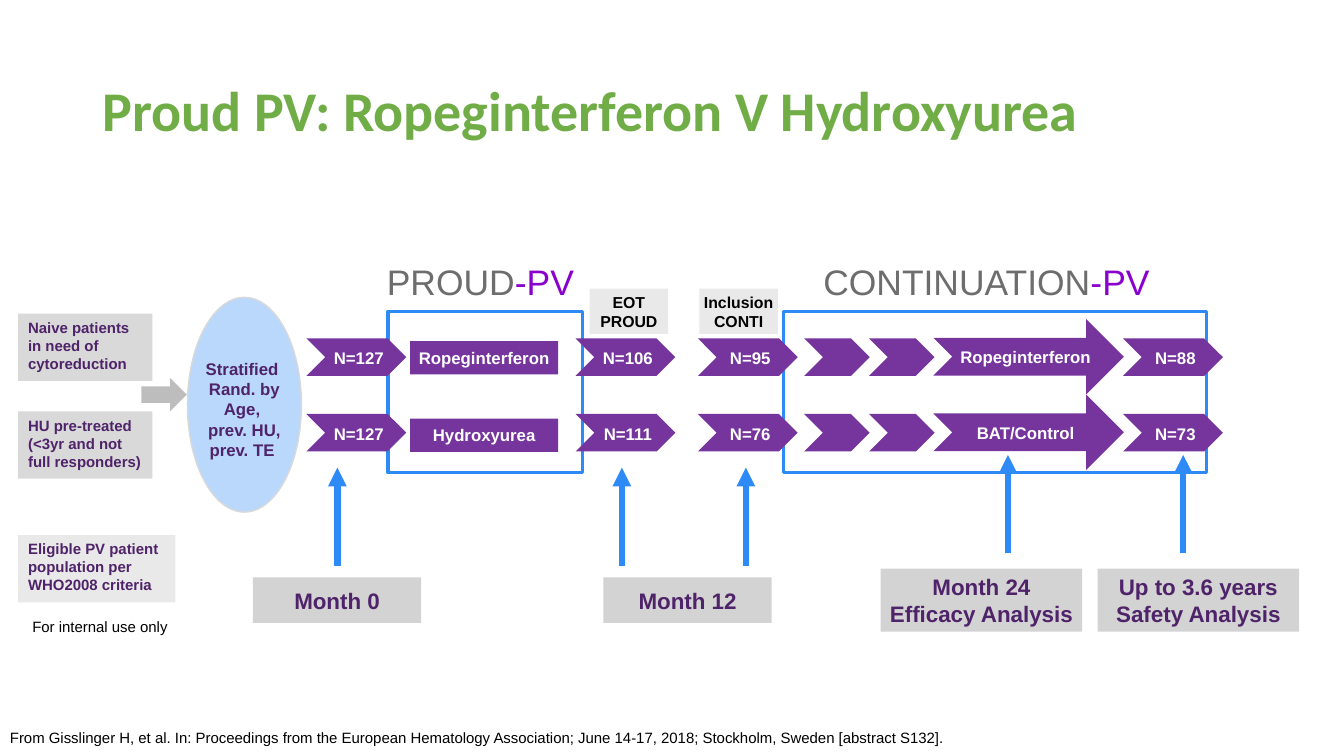
from dataclasses import dataclass
from typing import Optional

from lxml.etree import SubElement
from pptx import Presentation
from pptx.dml.color import RGBColor
from pptx.enum.shapes import MSO_CONNECTOR as Link, MSO_SHAPE as Kind
from pptx.enum.text import MSO_ANCHOR as Anchor, PP_ALIGN as Align
from pptx.oxml.ns import qn
from pptx.util import Pt

GREEN = RGBColor(0x70, 0xAD, 0x47)
BLUE = RGBColor(0x2E, 0x8A, 0xF6)
SKY = RGBColor(0xB9, 0xD8, 0xFC)
PLUM = RGBColor(0x4F, 0x23, 0x69)
PURPLE = RGBColor(0x76, 0x35, 0x9D)
BRIGHT = RGBColor(0x8A, 0x00, 0xCC)
BLACK = RGBColor(0, 0, 0)
WHITE = RGBColor(0xFF, 0xFF, 0xFF)
PALE = RGBColor(0xE9, 0xE9, 0xE9)
LIGHT = RGBColor(0xD9, 0xD9, 0xD9)
SILVER = RGBColor(0xD3, 0xD3, 0xD3)
GRAY = RGBColor(0xBD, 0xBD, 0xBD)
SLATE = RGBColor(0x6D, 0x6D, 0x6D)


@dataclass(frozen=True)
class Style:
    size: float
    color: RGBColor
    bold: bool = True
    align: Align = Align.CENTER
    anchor: Anchor = Anchor.MIDDLE
    wrap: bool = False
    font: str = "Arial"
    pad: tuple[float, float] = (7.2, 3.6)
    space: Optional[float] = None


@dataclass(frozen=True)
class Box:
    x: float
    y: float
    w: float
    h: float
    text: str = ""
    style: Optional[Style] = None
    kind: Optional[Kind] = None
    fill: Optional[RGBColor] = None
    line: Optional[RGBColor] = None
    width: float = 1
    tail: str = ""


@dataclass(frozen=True)
class Arrow:
    x: float
    start: float
    end: float


TITLE = Style(40, GREEN, align=Align.LEFT, wrap=True, font="Calibri", space=0.9)
GROUP = Style(10.7, PLUM, align=Align.LEFT, anchor=Anchor.TOP)
USE = Style(10.7, BLACK, False, Align.LEFT, Anchor.BOTTOM, True, pad=(9.4, 5))
SOURCE = Style(10.7, BLACK, False, Align.LEFT, Anchor.TOP, True)
RANDOM = Style(12, PLUM, anchor=Anchor.TOP)
MONTH = Style(16, PLUM)
PHASE = Style(25.3, SLATE, False, Align.LEFT, Anchor.TOP)
VISIT = Style(11.3, BLACK)
LABEL = Style(12, WHITE)
ARM = Style(12, WHITE, pad=(0, 3.6))

ROWS = (241.7, 295.7)
COUNTS = ((218.9, "N=127", "N=127"), (411.1, "N=106", "N=111"),
          (498.5, "N=95", "N=76"), (802.2, "N=88", "N=73"))
STEPS = (574.4, 620.8)
DRUGS = ("Ropeginterferon", "Hydroxyurea")
ARMS = ("Ropeginterferon", "BAT/Control")

BASE = [
    Box(66.2, 28.8, 828, 104.4, "Proud PV: Ropeginterferon V Hydroxyurea", TITLE),
    Box(559.4, 222.5, 302.4, 115.2, kind=Kind.RECTANGLE, line=BLUE, width=2.25),
    Box(277.2, 222.5, 139, 115.2, kind=Kind.RECTANGLE, line=BLUE, width=2.25),
    Box(13.7, 398.9, 676.8, 59.8, "For internal use only", USE),
    Box(13, 224, 95.8, 48.2, "Naive patients\vin need of\ncytoreduction",
        GROUP, Kind.RECTANGLE, LIGHT),
    Box(13, 293.8, 95.8, 48.2, "HU pre-treated\v(<3yr and not \vfull responders)",
        GROUP, Kind.RECTANGLE, LIGHT),
    Box(13, 382.2, 112.3, 48.2, "Eligible PV patient\vpopulation per\vWHO2008 criteria",
        GROUP, Kind.RECTANGLE, PALE),
    Box(133.9, 212.4, 81.4, 153.4, kind=Kind.OVAL, fill=SKY, line=LIGHT),
    Box(133.2, 252.7, 82.8, 94.3,
        "Stratified \vRand. by\vAge, \vprev. HU,\vprev. TE ", RANDOM),
    Box(180.7, 412.4, 120.2, 32.6, "Month 0", MONTH, Kind.RECTANGLE, SILVER),
    Box(431.1, 412.4, 120.2, 32.6, "Month 12", MONTH, Kind.RECTANGLE, SILVER),
    Box(629.1, 406.2, 144, 45, "Month 24\vEfficacy Analysis",
        MONTH, Kind.RECTANGLE, SILVER),
    Box(784, 406.2, 144, 45, "Up to 3.6 years\vSafety Analysis",
        MONTH, Kind.RECTANGLE, SILVER),
    Box(269.3, 182.2, 167.8, 43.9, "PROUD", PHASE, tail="-PV"),
    Box(581, 182.2, 272.2, 43.9, "CONTINUATION", PHASE, tail="-PV"),
    Box(421.1, 206.1, 56.2, 32.4, "EOT\nPROUD", VISIT, Kind.RECTANGLE, PALE),
    Box(499.5, 206.1, 56.2, 32.4, "Inclusion\nCONTI", VISIT, Kind.RECTANGLE, PALE),
    Box(101, 270, 32.4, 23.8, kind=Kind.RIGHT_ARROW, fill=GRAY),
]
ARROWS = ([Arrow(x, 404, 334) for x in (241, 444.2, 532.8)]
          + [Arrow(x, 395, 325) for x in (720, 845.2)])
CITE = Box(0, 517, 831.6, 20.2,
           "From Gisslinger H, et al. In: Proceedings from the European Hematology "
           "Association; June 14-17, 2018; Stockholm, Sweden [abstract S132].", SOURCE)


def flow() -> list[Box]:
    parts: list[Box] = []
    for row, y in enumerate(ROWS):
        parts.append(Box(293, y + 1.9 + 1.4 * row, 105.8, 23.8, DRUGS[row], LABEL,
                         Kind.RECTANGLE, PURPLE))
        for x, *counts in COUNTS:
            parts.append(Box(x, y, 71.3, 26.8, kind=Kind.CHEVRON, fill=PURPLE))
            parts.append(Box(x + 7.5, y + 2.8, 59.8, 22.3, counts[row], LABEL))
        for x in STEPS:
            parts.append(Box(x, y, 46.8, 26.8, kind=Kind.CHEVRON, fill=PURPLE))
        parts.append(Box(666.7, y - 13.9, 136.1, 54,
                         kind=Kind.NOTCHED_RIGHT_ARROW, fill=PURPLE))
        parts.append(Box(682.6, y + 2, 100, 22.3, ARMS[row], ARM))
    return parts


def write(shape, box: Box) -> None:
    style = box.style
    frame = shape.text_frame
    side, top = style.pad
    frame.text = box.text
    form = {"word_wrap": style.wrap, "vertical_anchor": style.anchor,
            "margin_left": Pt(side), "margin_right": Pt(side),
            "margin_top": Pt(top), "margin_bottom": Pt(top)}
    for name, value in form.items():
        setattr(frame, name, value)
    if box.tail:
        frame.paragraphs[0].add_run().text = box.tail
    face = {"name": style.font, "size": Pt(style.size), "bold": style.bold}
    for para in frame.paragraphs:
        para.alignment = style.align
        if style.space:
            para.line_spacing = style.space
        for run in para.runs:
            for name, value in face.items():
                setattr(run.font, name, value)
            last = box.tail and run.text == box.tail
            run.font.color.rgb = BRIGHT if last else style.color


def draw(shapes, box: Box) -> None:
    place = [Pt(n) for n in (box.x, box.y, box.w, box.h)]
    if box.kind is None:
        shape = shapes.add_textbox(*place)
    else:
        shape = shapes.add_shape(box.kind, *place)
        shape.shadow.inherit = False
        for fill, color in ((shape.fill, box.fill), (shape.line.fill, box.line)):
            if color is None:
                fill.background()
            else:
                fill.solid()
                fill.fore_color.rgb = color
        if box.line is not None:
            shape.line.width = Pt(box.width)
    if box.style:
        write(shape, box)


def point(shapes, arrow: Arrow) -> None:
    link = shapes.add_connector(Link.STRAIGHT, Pt(arrow.x), Pt(arrow.start),
                                Pt(arrow.x), Pt(arrow.end))
    link.line.color.rgb = BLUE
    link.line.width = Pt(4.5)
    props = link._element.spPr
    SubElement(props.find(qn("a:ln")), qn("a:tailEnd"), type="triangle")
    SubElement(props, qn("a:effectLst"))


def main() -> None:
    deck = Presentation()
    deck.slide_width, deck.slide_height = Pt(960), Pt(540)
    shapes = deck.slides.add_slide(deck.slide_layouts[6]).shapes
    for box in BASE:
        draw(shapes, box)
    for arrow in ARROWS:
        point(shapes, arrow)
    for box in flow() + [CITE]:
        draw(shapes, box)
    deck.save("out.pptx")


if __name__ == "__main__":
    main()
